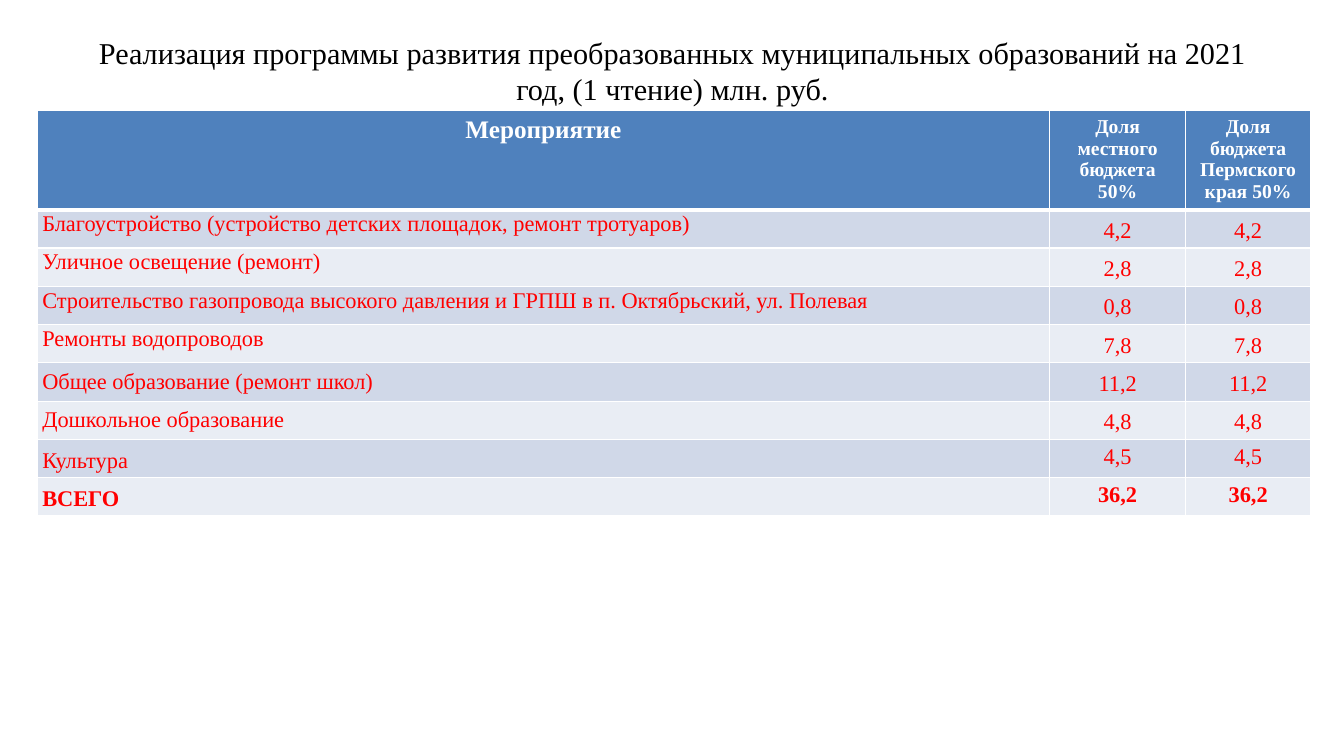
import pptx
import pptx.util
import pptx.dml.color
import pptx.enum.text
import pptx.oxml
import pptx.oxml.ns

Inches, Pt = pptx.util.Inches, pptx.util.Pt
RGB = pptx.dml.color.RGBColor.from_string
ALIGN = pptx.enum.text.PP_ALIGN
ANCHOR = pptx.enum.text.MSO_ANCHOR

TITLE = ("Реализация программы развития преобразованных муниципальных "
         "образований на 2021 год, (1 чтение) млн. руб.")
HEADERS = ["Мероприятие", "Доля местного бюджета 50%", "Доля бюджета Пермского края 50%"]
ACTIVITIES = [
    ("Благоустройство (устройство детских площадок, ремонт тротуаров)", "4,2", "4,2"),
    ("Уличное освещение (ремонт)", "2,8", "2,8"),
    ("Строительство газопровода высокого давления и ГРПШ в п. Октябрьский, ул. Полевая", "0,8", "0,8"),
    ("Ремонты водопроводов", "7,8", "7,8"),
    ("Общее образование (ремонт школ)", "11,2", "11,2"),
    ("Дошкольное образование", "4,8", "4,8"),
    ("Культура", "4,5", "4,5"),
    ("ВСЕГО", "36,2", "36,2"),
]
COLORS = {"title": "000000", "header": "4F81BD", "odd": "D0D8E8", "even": "E9EDF4",
          "white": "FFFFFF", "body": "FF0000"}
FONT = "Times New Roman"
COL_WIDTHS = [10.04, 1.35, 1.24]
HEADER_HEIGHT, ROW_HEIGHT = 0.98, 0.38
TIGHT_ROWS, MIDDLE_ROWS = 4, 6


def format_text(tf, size, color, align, bold=False):
    p = tf.paragraphs[0]
    p.alignment = align
    for r in p.runs:
        r.font.name = FONT
        r.font.size = Pt(size)
        r.font.bold = bold
        r.font.color.rgb = RGB(COLORS[color])
    return p


def set_borders(cell, top, bottom):
    tcPr = cell._tc.get_or_add_tcPr()
    for side, width in (("L", 1), ("R", 1), ("T", top), ("B", bottom)):
        tcPr.append(pptx.oxml.parse_xml(
            f'<a:ln{side} {pptx.oxml.ns.nsdecls("a")} w="{Pt(width)}"><a:solidFill>'
            f'<a:srgbClr val="{COLORS["white"]}"/></a:solidFill></a:ln{side}>'))


def set_margins(cell, top):
    cell.margin_left = cell.margin_right = Inches(0.05)
    cell.margin_top, cell.margin_bottom = Pt(top), 0


def fill_cell(cell, row, col, text):
    set_borders(cell, 3 if row == 1 else 1, 3 if row == 0 else 1)
    cell.fill.solid()
    cell.text_frame.text = text
    if row == 0:
        cell.fill.fore_color.rgb = RGB(COLORS["header"])
        format_text(cell.text_frame, 14 if col else 18, "white", ALIGN.CENTER, True)
        return
    cell.fill.fore_color.rgb = RGB(COLORS["odd" if row % 2 else "even"])
    p = format_text(cell.text_frame, 16, "body", ALIGN.CENTER if col else ALIGN.LEFT,
                    row == len(ACTIVITIES))
    if col == 0 and row <= MIDDLE_ROWS:
        set_margins(cell, 0)
        cell.vertical_anchor = ANCHOR.MIDDLE
        if row <= TIGHT_ROWS:
            p.line_spacing = Pt(11)
    elif col == 0 or row <= MIDDLE_ROWS:
        set_margins(cell, 12)
        p.line_spacing = Pt(12)


prs = pptx.Presentation()
prs.slide_width, prs.slide_height = Inches(13.33), Inches(7.5)
s = prs.slides.add_slide(prs.slide_layouts[5])

title = s.shapes.title
title.left, title.top, title.width, title.height = map(Inches, (0.67, 0.3, 12, 0.8))
tf = title.text_frame
tf.text = TITLE
tf.word_wrap = True
tf.auto_size = pptx.enum.text.MSO_AUTO_SIZE.NONE
tf.vertical_anchor = ANCHOR.MIDDLE
format_text(tf, 21.6, "title", ALIGN.CENTER)

rows = [HEADERS] + ACTIVITIES
height = HEADER_HEIGHT + ROW_HEIGHT * len(ACTIVITIES)
table = s.shapes.add_table(len(rows), len(HEADERS), Inches(0.37), Inches(1.1),
                           Inches(sum(COL_WIDTHS)), Inches(height)).table
for column, width in zip(table.columns, COL_WIDTHS):
    column.width = Inches(width)
for i, texts in enumerate(rows):
    table.rows[i].height = Inches(ROW_HEIGHT if i else HEADER_HEIGHT)
    for j, text in enumerate(texts):
        fill_cell(table.cell(i, j), i, j, text)

prs.save("out.pptx")
